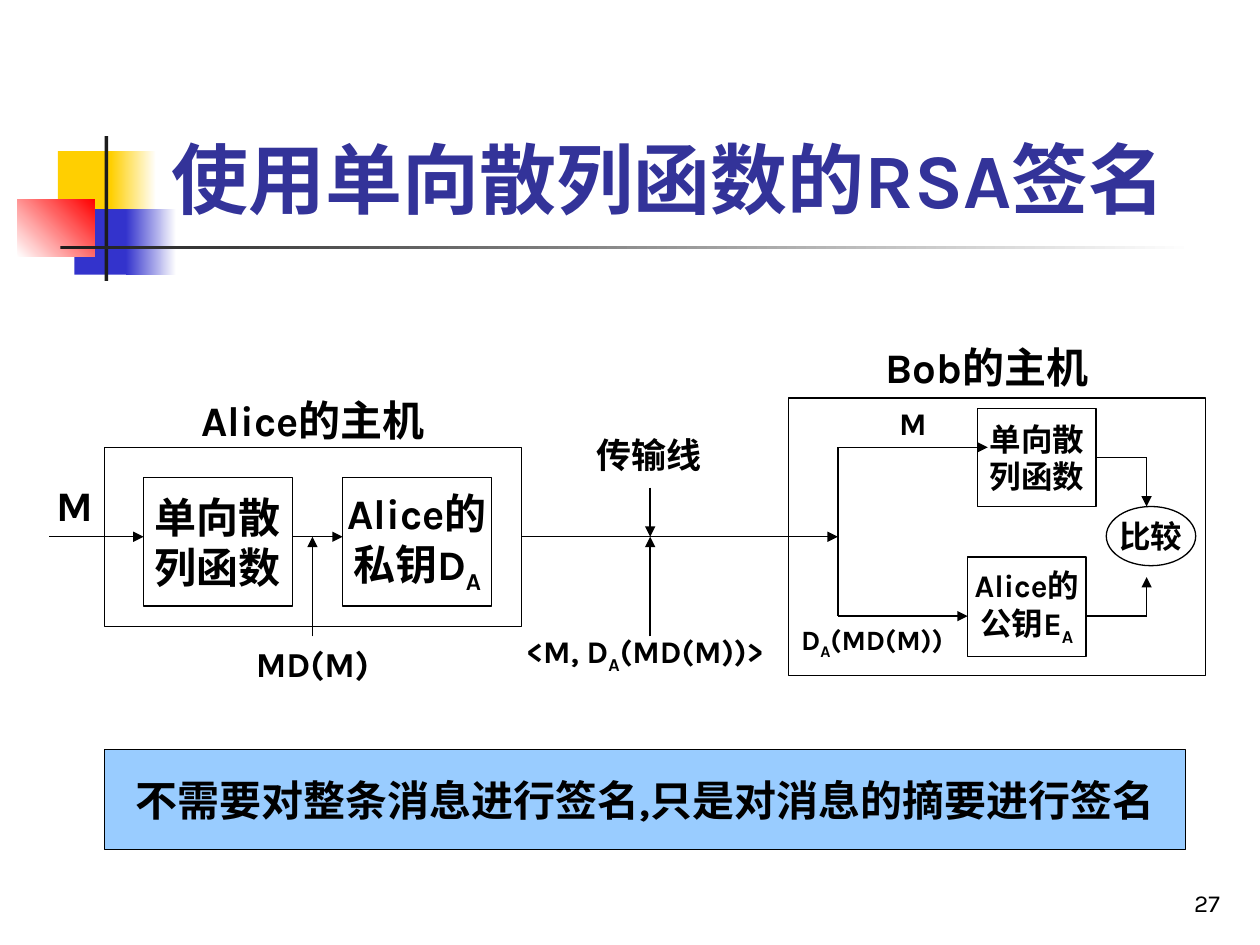
from lxml.etree import SubElement
from pptx import Presentation
from pptx.dml.color import RGBColor
from pptx.enum.shapes import MSO_CONNECTOR, MSO_SHAPE
from pptx.enum.text import MSO_ANCHOR, MSO_AUTO_SIZE, PP_ALIGN
from pptx.oxml.ns import qn
from pptx.util import Inches, Pt

FONT = "Karla"
COLORS = {
    "black": "000000",
    "white": "FFFFFF",
    "yellow": "FFCF01",
    "blue": "3333CC",
    "red": "FF0000",
    "charcoal": "1C1C1C",
    "title": "333399",
    "note": "99CCFF",
}
RIGHT_SIDE = 3


def color(name):
    return RGBColor.from_string(COLORS[name])


def write_text(text_frame, text, size, alignment, anchor, bold=True, font_color="black"):
    text_frame.vertical_anchor = anchor
    for index, line in enumerate(text.split("\n")):
        paragraph = text_frame.paragraphs[0] if index == 0 else text_frame.add_paragraph()
        paragraph.alignment = alignment
        for position, part in enumerate(line.split("_")):
            if not part:
                continue
            run = paragraph.add_run()
            run.text = part
            run.font.name = FONT
            run.font.size = Pt(size)
            run.font.bold = bold
            run.font.color.rgb = color(font_color)
            if position % 2:
                run.font._element.set("baseline", "-25000")


def add_block(slide, left, top, width, height, fill, fade=None, angle=0):
    shape = slide.shapes.add_shape(
        MSO_SHAPE.RECTANGLE, Inches(left), Inches(top), Inches(width), Inches(height))
    shape.shadow.inherit = False
    shape.line.fill.background()
    if fade:
        shape.fill.gradient()
        shape.fill.gradient_angle = angle
        for stop, name, position in zip(shape.fill.gradient_stops, (fill, fade), (0, 1)):
            stop.color.rgb = color(name)
            stop.position = position
    else:
        shape.fill.solid()
        shape.fill.fore_color.rgb = color(fill)


def add_box(slide, left, top, width, height, text="", size=18, fill=None,
            kind=MSO_SHAPE.RECTANGLE):
    shape = slide.shapes.add_shape(
        kind, Inches(left), Inches(top), Inches(width), Inches(height))
    shape.shadow.inherit = False
    shape.line.color.rgb = color("black")
    shape.line.width = Pt(0.75)
    if fill:
        shape.fill.solid()
        shape.fill.fore_color.rgb = color(fill)
    else:
        shape.fill.background()
    if text:
        shape.text_frame.word_wrap = False
        write_text(shape.text_frame, text, size, PP_ALIGN.CENTER, MSO_ANCHOR.MIDDLE)
    return shape


def add_label(slide, left, top, width, height, text, size, alignment=PP_ALIGN.CENTER,
              anchor=MSO_ANCHOR.TOP, bold=True):
    text_box = slide.shapes.add_textbox(
        Inches(left), Inches(top), Inches(width), Inches(height))
    text_box.text_frame.word_wrap = True
    write_text(text_box.text_frame, text, size, alignment, anchor, bold)


def add_line(slide, start, end, arrow=True, source=None):
    connector = slide.shapes.add_connector(
        MSO_CONNECTOR.STRAIGHT, *(Inches(value) for value in start + end))
    connector.line.color.rgb = color("black")
    connector.line.width = Pt(0.75)
    if arrow:
        SubElement(connector.line._get_or_add_ln(), qn("a:tailEnd"), type="triangle")
    SubElement(connector._element.spPr, qn("a:effectLst"))
    if source is not None:
        connector.begin_connect(source, RIGHT_SIDE)


def add_decoration(slide):
    add_block(slide, 0.46, 1.2, 0.48, 0.52, "yellow")
    add_block(slide, 0.88, 1.2, 0.36, 0.52, "yellow", "white")
    add_block(slide, 0.59, 1.66, 0.46, 0.52, "blue")
    add_block(slide, 1, 1.66, 0.4, 0.52, "blue", "white")
    add_block(slide, 0.14, 1.58, 0.61, 0.46, "white", "red", 45)
    add_block(slide, 0.83, 1.08, 0.03, 1.15, "charcoal")
    add_block(slide, 0.48, 1.95, 9, 0.03, "charcoal", "white")


def add_title(slide, text):
    title = slide.shapes.title
    title.left, title.top = Inches(1.26), Inches(0.23)
    title.width, title.height = Inches(8.52), Inches(1.6)
    title.text_frame.auto_size = MSO_AUTO_SIZE.NONE
    write_text(title.text_frame, text, 44, PP_ALIGN.LEFT, MSO_ANCHOR.BOTTOM,
               font_color="title")


def add_alice(slide):
    host = add_box(slide, 0.83, 3.55, 3.31, 1.42)
    add_box(slide, 1.14, 3.79, 1.18, 1.02, "单向散\n列函数", 24)
    add_box(slide, 2.72, 3.79, 1.18, 1.02, "Alice的\n私钥D_A", 24)
    add_label(slide, 0.75, 3.08, 3.47, 0.5, "Alice的主机", 24)
    add_label(slide, 0.35, 3.76, 0.55, 0.5, "M", 24, PP_ALIGN.LEFT)
    add_label(slide, 1.77, 5.05, 1.42, 0.43, "MD(M)", 20)
    add_line(slide, (0.39, 4.26), (1.14, 4.26))
    add_line(slide, (2.32, 4.26), (2.72, 4.26))
    add_line(slide, (2.48, 5.05), (2.48, 4.26))
    return host


def add_transmission(slide, host):
    add_line(slide, (4.14, 4.26), (6.65, 4.26), source=host)
    add_label(slide, 4.29, 3.39, 1.73, 0.43, "传输线", 20)
    add_label(slide, 3.74, 4.97, 2.76, 0.4, "<M, D_A_(MD(M))>", 18)
    for start in (3.87, 5.05):
        add_line(slide, (5.16, start), (5.16, 4.26))


def add_bob(slide):
    add_box(slide, 6.26, 3.16, 3.31, 2.2)
    hash_box = add_box(slide, 7.76, 3.24, 0.94, 0.78, "单向散\n列函数")
    add_box(slide, 7.68, 4.42, 0.94, 0.79, "Alice的\n公钥E_A")
    add_box(slide, 8.78, 4.02, 0.71, 0.47, "比较", kind=MSO_SHAPE.OVAL)
    add_label(slide, 6.1, 2.66, 3.47, 0.5, "Bob的主机", 24)
    add_label(slide, 6.81, 3.16, 0.87, 0.4, "M", 18)
    add_label(slide, 6.26, 4.89, 1.65, 0.37, "D_A_(MD(M))", 16, PP_ALIGN.LEFT)
    add_line(slide, (6.65, 3.55), (6.65, 4.89), arrow=False)
    add_line(slide, (6.65, 3.55), (7.84, 3.55))
    add_line(slide, (6.65, 4.89), (7.68, 4.89))
    add_line(slide, (8.7, 3.63), (9.1, 3.63), arrow=False, source=hash_box)
    add_line(slide, (9.1, 3.63), (9.1, 4.02))
    add_line(slide, (8.62, 4.89), (9.1, 4.89), arrow=False)
    add_line(slide, (9.1, 4.89), (9.1, 4.58))


def main():
    presentation = Presentation()
    presentation.slide_width = Inches(10)
    presentation.slide_height = Inches(7.5)
    slide = presentation.slides.add_slide(presentation.slide_layouts[5])
    add_decoration(slide)
    add_title(slide, "使用单向散列函数的RSA签名")
    host = add_alice(slide)
    add_transmission(slide, host)
    add_bob(slide)
    add_box(slide, 0.83, 5.95, 8.58, 0.79,
            "不需要对整条消息进行签名,只是对消息的摘要进行签名", 24, "note")
    add_label(slide, 7.7, 6.83, 2.08, 0.5, "27", 14, PP_ALIGN.RIGHT,
              MSO_ANCHOR.BOTTOM, bold=False)
    presentation.save("out.pptx")


if __name__ == "__main__":
    main()
